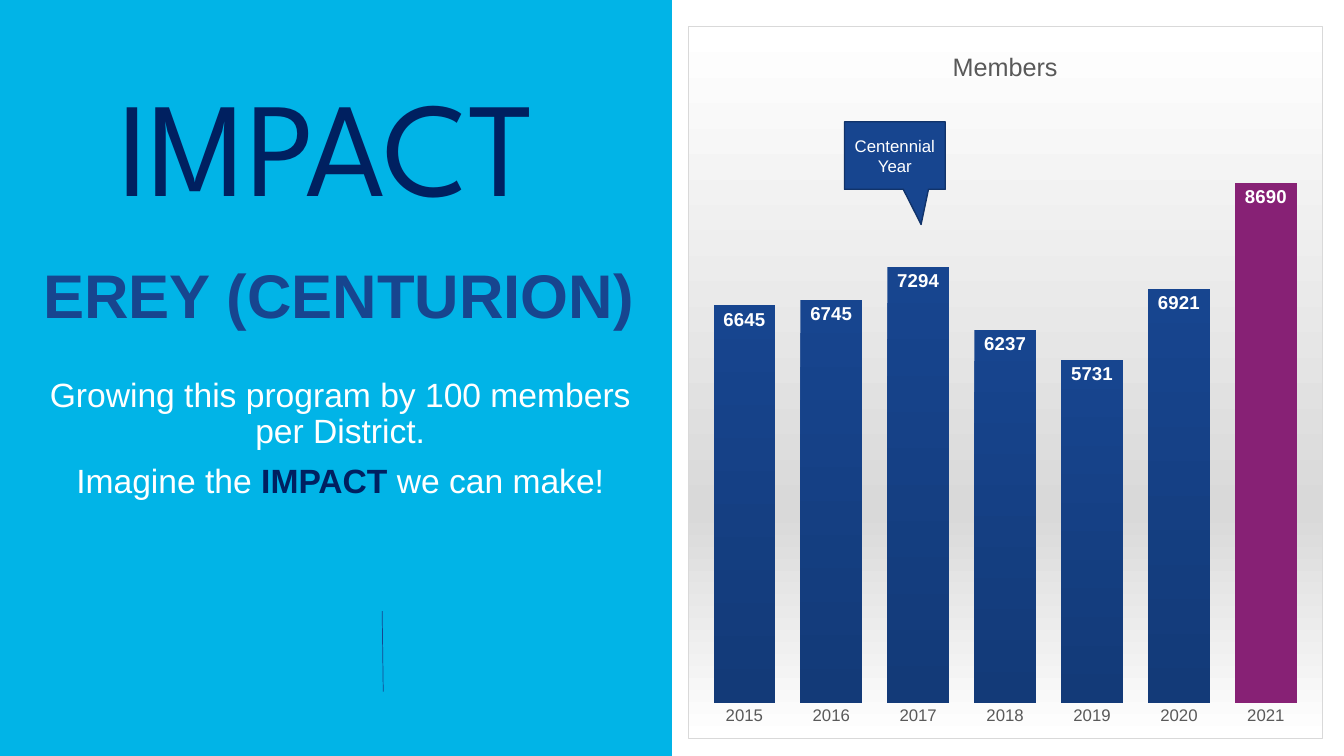
"""Builds the membership impact slide with its yearly column chart."""
from lxml import etree
from pptx import Presentation
from pptx.chart import data
from pptx.dml.color import RGBColor
from pptx.enum import chart as charts, shapes, text
from pptx.oxml import ns, parse_xml
from pptx.util import Pt

SKY = RGBColor(0x01, 0xB4, 0xE7)
BLUE = RGBColor(0x17, 0x45, 0x8F)
DEEP_BLUE = RGBColor(0x13, 0x3A, 0x78)
EDGE_BLUE = RGBColor(0x11, 0x33, 0x6A)
NAVY = RGBColor(0x00, 0x20, 0x60)
PURPLE = RGBColor(0x87, 0x21, 0x75)
GRAY = RGBColor(0x59, 0x59, 0x59)
LIGHT_GRAY = RGBColor(0xD9, 0xD9, 0xD9)
WHITE = RGBColor(0xFF, 0xFF, 0xFF)

MEMBERS = {"2015": 6645, "2016": 6745, "2017": 7294, "2018": 6237,
           "2019": 5731, "2020": 6921, "2021": 8690}


def set_font(font, size, color, bold=False, name="Arial"):
    font.name, font.size, font.bold = name, Pt(size), bold
    font.color.rgb = color


def place(holder, left, top, width, height, anchor, wrap=True):
    holder.left, holder.top = Pt(left), Pt(top)
    holder.width, holder.height = Pt(width), Pt(height)
    frame = holder.text_frame
    frame.auto_size = text.MSO_AUTO_SIZE.NONE
    frame.vertical_anchor, frame.word_wrap = anchor, wrap
    return frame


prs = Presentation()
prs.slide_width, prs.slide_height = Pt(960), Pt(540)
slide = prs.slides.add_slide(prs.slide_layouts[7])

panel = slide.shapes.add_shape(shapes.MSO_SHAPE.RECTANGLE, 0, 0, Pt(480), Pt(540))
panel.shadow.inherit = False
panel.fill.solid()
panel.fill.fore_color.rgb = SKY
panel.line.fill.background()
slide.shapes.element.insert(2, panel.element)

impact = place(slide.shapes.title, 42.5, 41, 381.5, 124, text.MSO_ANCHOR.TOP, wrap=False)
impact.text = "IMPACT"
impact.paragraphs[0].alignment = text.PP_ALIGN.CENTER
set_font(impact.paragraphs[0].runs[0].font, 96, NAVY, name="League Spartan")

program = place(slide.placeholders[1], 19.5, 168.5, 445, 89, text.MSO_ANCHOR.MIDDLE)
program.text = "EREY (CENTURION)"
goal = place(slide.placeholders[2], 28, 266.5, 430, 155.5, text.MSO_ANCHOR.TOP)
goal.text = "Growing this program by 100 members per District.\nImagine the "
for word in ("IMPACT", " we can make!"):
    goal.paragraphs[1].add_run().text = word

for frame, size, color, bold in ((program, 44, BLUE, True), (goal, 24, WHITE, False)):
    for number, paragraph in enumerate(frame.paragraphs):
        paragraph.alignment = text.PP_ALIGN.CENTER
        paragraph.line_spacing = 0.9
        paragraph.space_before = Pt(10 if number else 0)
        properties = paragraph._p.get_or_add_pPr()
        properties.set("marL", "0")
        properties.set("indent", "0")
        etree.SubElement(properties, ns.qn("a:buNone"))
        for run in paragraph.runs:
            set_font(run.font, size, color, bold)
set_font(goal.paragraphs[1].runs[1].font, 24, NAVY, bold=True)

divider = slide.shapes.add_connector(
    shapes.MSO_CONNECTOR.STRAIGHT, Pt(273), Pt(436.5), Pt(273.75), Pt(494))
divider.line.color.rgb = BLUE
divider.line.width = Pt(0.5)
etree.SubElement(divider.element.spPr, ns.qn("a:effectLst"))

membership = data.CategoryChartData()
membership.categories = list(MEMBERS)
membership.add_series("Series 1", list(MEMBERS.values()))
chart = slide.shapes.add_chart(
    charts.XL_CHART_TYPE.COLUMN_CLUSTERED,
    Pt(491.25), Pt(18.75), Pt(453.5), Pt(509), membership).chart
chart.has_legend = False
chart.font.name, chart.font.size = "Arial", Pt(10)
chart.has_title = True
heading = chart.chart_title.text_frame
heading.text = "Members"
set_font(heading.paragraphs[0].runs[0].font, 18, GRAY)

years = chart.category_axis
set_font(years.tick_labels.font, 12, GRAY)
years.format.line.fill.background()
years.major_tick_mark = charts.XL_TICK_MARK.NONE
years.has_major_gridlines = False
scale = chart.value_axis
scale.minimum_scale, scale.maximum_scale = 0, 10000
scale.has_major_gridlines = False
scale.visible = False

plot = chart.plots[0]
plot.gap_width = 41
plot.vary_by_categories = False
columns = plot.series[0]
columns.format.fill.gradient()
columns.format.fill.gradient_angle = 270
for stop, color in zip(columns.format.fill.gradient_stops, (BLUE, DEEP_BLUE)):
    stop.color.rgb = color
latest = columns.points[len(MEMBERS) - 1].format.fill
latest.solid()
latest.fore_color.rgb = PURPLE
labels = columns.data_labels
labels.show_value = True
labels.position = charts.XL_LABEL_POSITION.INSIDE_END
set_font(labels.font, 13.3, WHITE, bold=True)

stops = "".join(
    f'<a:gs pos="{position}000"><a:srgbClr val="{color}"/></a:gs>'
    for position, color in ((0, WHITE), (68, LIGHT_GRAY), (100, WHITE)))
backdrop = parse_xml(
    f'<c:spPr {ns.nsdecls("c", "a")}><a:gradFill><a:gsLst>{stops}</a:gsLst>'
    f'<a:lin ang="5400000" scaled="0"/></a:gradFill><a:ln w="9525"><a:solidFill>'
    f'<a:srgbClr val="{LIGHT_GRAY}"/></a:solidFill></a:ln></c:spPr>')
chart.element.find(ns.qn("c:txPr")).addprevious(backdrop)

plot_area = chart.element.find(".//" + ns.qn("c:plotArea"))
for automatic in plot_area.findall(ns.qn("c:layout")):
    plot_area.remove(automatic)
layout = etree.Element(ns.qn("c:layout"))
manual = etree.SubElement(layout, ns.qn("c:manualLayout"))
for tag, value in (("layoutTarget", "inner"), ("xMode", "edge"), ("yMode", "edge"),
                   ("x", "0.02"), ("y", "0.11"), ("w", "0.96"), ("h", "0.84")):
    etree.SubElement(manual, ns.qn(f"c:{tag}")).set("val", value)
plot_area.insert(0, layout)

centennial = slide.shapes.add_shape(
    shapes.MSO_SHAPE.RECTANGULAR_CALLOUT, Pt(603.25), Pt(87), Pt(72), Pt(48.25))
centennial.adjustments[0], centennial.adjustments[1] = 0.26, 1.02
centennial.shadow.inherit = False
centennial.fill.solid()
centennial.fill.fore_color.rgb = BLUE
centennial.line.color.rgb = EDGE_BLUE
centennial.line.width = Pt(1)
centennial.text_frame.text = "Centennial Year"
centennial.text_frame.word_wrap = True
centennial.text_frame.vertical_anchor = text.MSO_ANCHOR.MIDDLE
centennial.text_frame.paragraphs[0].alignment = text.PP_ALIGN.CENTER
set_font(centennial.text_frame.paragraphs[0].runs[0].font, 12, WHITE)

prs.save("out.pptx")
